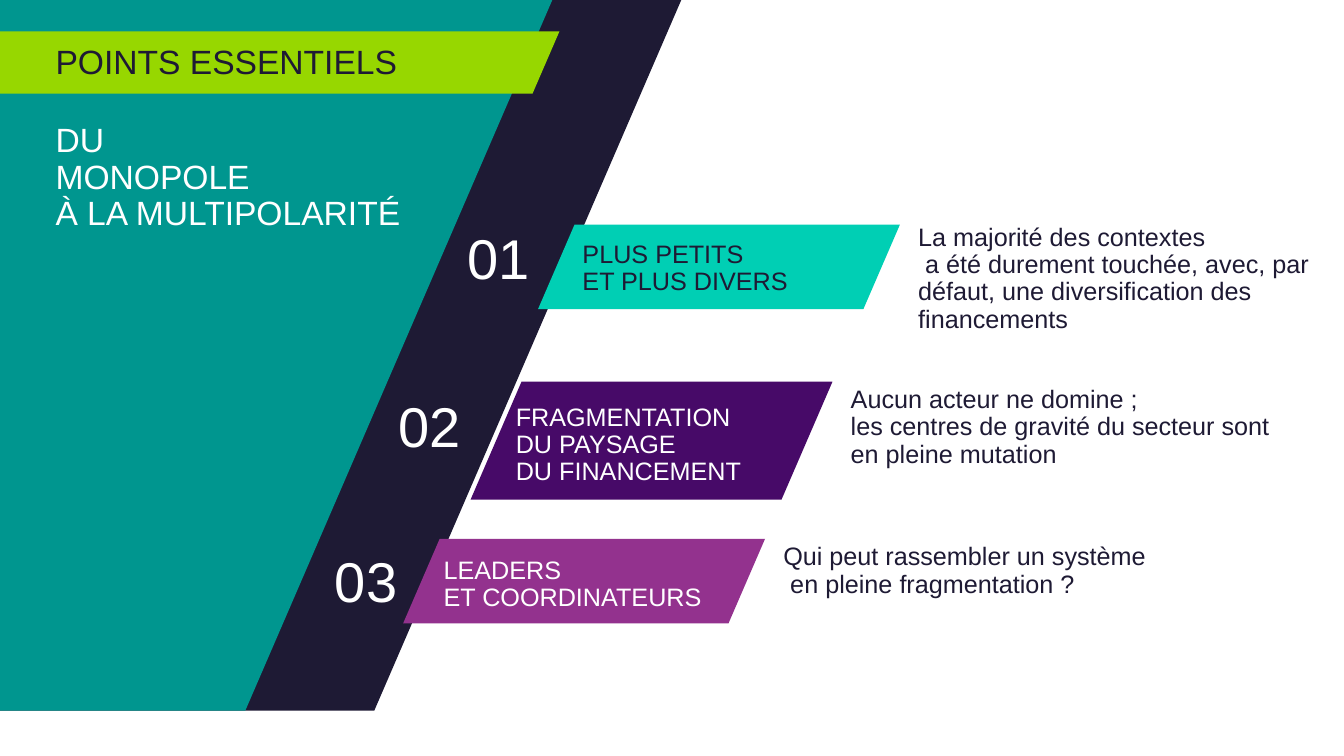
from dataclasses import dataclass

from pptx import Presentation
from pptx.dml.color import RGBColor as Rgb
from pptx.enum.shapes import MSO_SHAPE as Form
from pptx.enum.text import MSO_ANCHOR as Anchor, MSO_AUTO_SIZE as Fit, PP_ALIGN as Align
from pptx.util import Cm, Pt


@dataclass(frozen=True)
class Theme:
    """Colours, font and type sizes of the slide."""
    font: str = "Arial"
    ink: str = "1E1A34"
    white: str = "FFFFFF"
    teal: str = "00968F"
    lime: str = "97D700"
    mint: str = "00CFB4"
    violet: str = "470A68"
    plum: str = "93328E"
    head: int = 24
    body: int = 18
    digit: int = 40
    slant: float = 0.432


THEME = Theme()

ROWS = [
    dict(num="01", label="PLUS PETITS \nET PLUS DIVERS",
         note="La majorité des contextes\n a été durement touchée, avec, par défaut, "
              "une diversification des financements",
         fill=THEME.mint, color=THEME.ink, high=2.13, wide=10.54,
         digit=(-2.23, -0.15), inset=(1.12, 0.43), drop=0),
    dict(num="02", label="FRAGMENTATION\nDU PAYSAGE \nDU FINANCEMENT",
         note="Aucun acteur ne domine ; \nles centres de gravité du secteur sont "
              "en pleine mutation",
         fill=THEME.violet, color=THEME.white, high=2.97, wide=10.74,
         digit=(-2.28, 0.12), inset=(1.14, 0.58), drop=0.13),
    dict(num="03", label="LEADERS \nET COORDINATEURS",
         note="Qui peut rassembler un système\n en pleine fragmentation ?",
         fill=THEME.plum, color=THEME.white, high=2.13, wide=11.43,
         digit=(-2.18, 0.05), inset=(1.02, 0.48), drop=0.13),
]


def place(shape, box):
    """Move a shape to a box given in centimetres."""
    shape.left, shape.top, shape.width, shape.height = map(Cm, box)


def write(frame, text, size=THEME.body, color=THEME.ink, align=Align.LEFT,
          space=0.9, pad=(0, 0)):
    """Fill a text frame with one formatted paragraph."""
    frame.word_wrap = True
    frame.auto_size = Fit.NONE
    frame.vertical_anchor = Anchor.TOP
    frame.margin_left = frame.margin_right = Cm(pad[0])
    frame.margin_top = frame.margin_bottom = Cm(pad[1])
    para = frame.paragraphs[0]
    para.text = text
    para.alignment = align
    para.line_spacing = space
    para.space_before = Pt(0)
    for run in para.runs:
        run.font.name = THEME.font
        run.font.size = Pt(size)
        run.font.color.rgb = Rgb.from_string(color)


def add_text(slide, box, text, **style):
    """Add a text box with formatted text."""
    write(slide.shapes.add_textbox(*map(Cm, box)).text_frame, text, **style)


def add_band(slide, box, fill):
    """Add a plain slanted band."""
    band = slide.shapes.add_shape(Form.PARALLELOGRAM, *map(Cm, box))
    band.adjustments[0] = THEME.slant
    band.fill.solid()
    band.fill.fore_color.rgb = Rgb.from_string(fill)
    band.line.fill.background()
    band.shadow.inherit = False


def add_panel(slide, x, y, wide, high):
    """Draw the slanted panel with its dark edge, title and subtitle."""
    add_band(slide, (x, y, wide, high), THEME.ink)
    add_band(slide, (x, y, wide - 3.25, high), THEME.teal)
    add_band(slide, (x + 7.01, y + 0.79, 14.94, 1.57), THEME.lime)
    title = slide.shapes.title
    title.element.getparent().append(title.element)
    place(title, (x + 9.25, y + 1.14, 9.04, 0.81))
    write(title.text_frame, "POINTS ESSENTIELS", size=THEME.head)
    add_text(slide, (x + 9.25, y + 3.12, 9.04, 3.99),
             "DU\nMONOPOLE \nÀ LA MULTIPOLARITÉ",
             size=THEME.head, color=THEME.white)


def add_row(slide, x, y, wide, row):
    """Draw one key point: number, slanted label and note."""
    add_band(slide, (x, y, wide, row["high"]), row["fill"])
    dx, dy = row["inset"]
    add_text(slide, (x + dx, y + dy, 7.4, row["high"] - dy),
             row["label"], color=row["color"])
    dx, dy = row["digit"]
    add_text(slide, (x + dx, y + dy, 2.49, 1.96), row["num"], size=THEME.digit,
             color=THEME.white, align=Align.CENTER, space=1.0, pad=(0.25, 0.13))
    add_text(slide, (x + wide + 0.46, y + row["drop"], row["wide"], 3),
             row["note"])


def main():
    """Build the slide and save it."""
    deck = Presentation()
    deck.slide_width, deck.slide_height = Cm(33.87), Cm(19.05)
    slide = deck.slides.add_slide(deck.slide_layouts[5])
    add_panel(slide, -7.85, 0, 25.02, 17.91)
    for step, row in enumerate(ROWS):
        add_row(slide, 13.56 - 1.7 * step, 5.66 + 3.96 * step, 9.12, row)
    deck.save("out.pptx")


if __name__ == "__main__":
    main()
